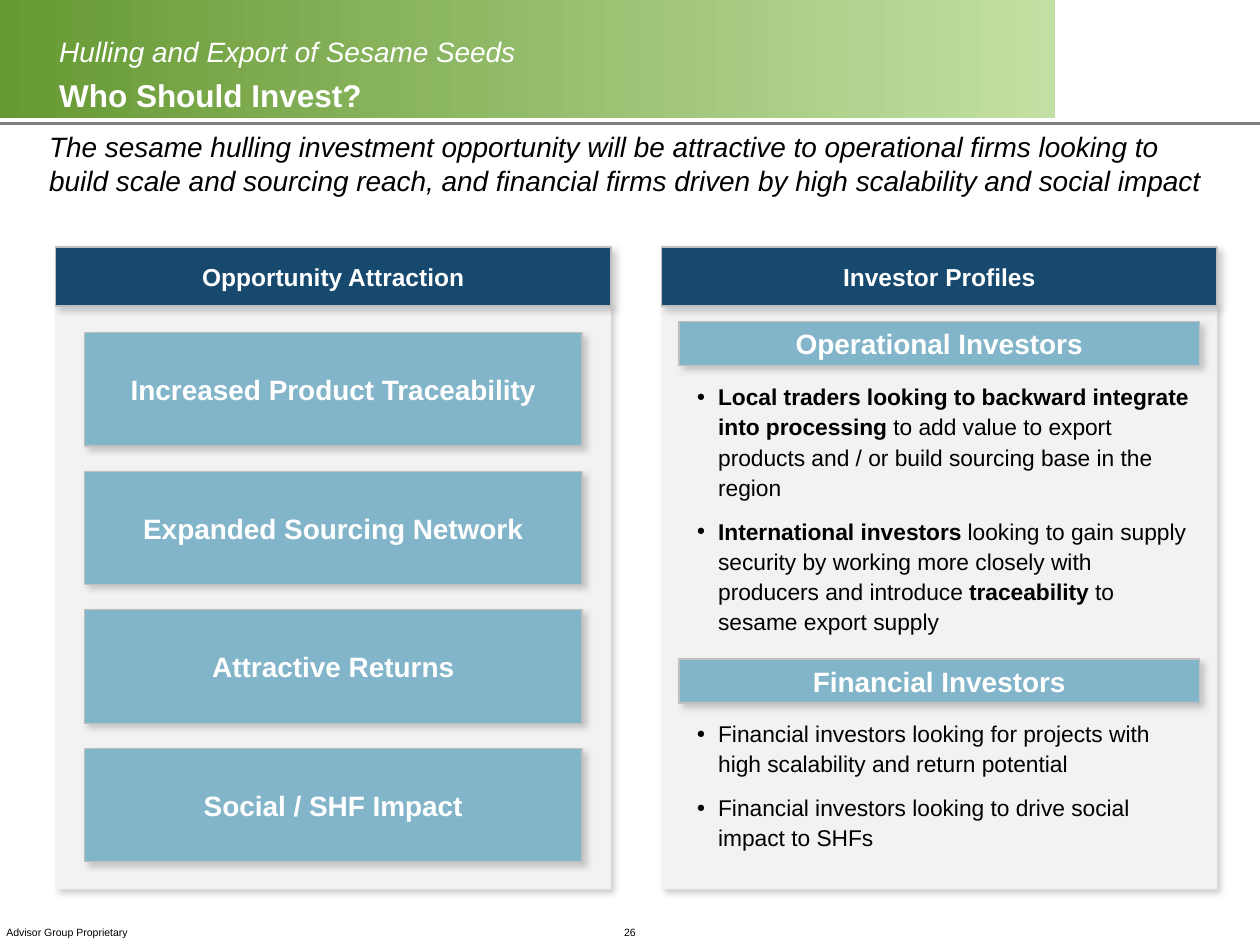
"""Build the slide on who should invest in sesame hulling and export."""
from dataclasses import dataclass

from pptx import Presentation
from pptx import util as u
from pptx.dml.color import RGBColor
from pptx.enum import shapes, text
from pptx.oxml import ns, xmlchemy

WHITE = RGBColor(0xFF, 0xFF, 0xFF)
BLACK = RGBColor(0x00, 0x00, 0x00)
GREEN = RGBColor(0x66, 0x99, 0x33)
PALE_GREEN = RGBColor(0xC2, 0xE0, 0xA3)
GREY = RGBColor(0x80, 0x80, 0x80)
EDGE = RGBColor(0xBF, 0xBF, 0xBF)
PANEL = RGBColor(0xF2, 0xF2, 0xF2)
NAVY = RGBColor(0x17, 0x49, 0x6F)
SKY = RGBColor(0x82, 0xB5, 0xCA)
FONT = "Arial"


@dataclass(frozen=True)
class Area:
    left: float
    top: float
    width: float
    height: float

    def lengths(self) -> tuple:
        return tuple(u.Inches(n) for n in (self.left, self.top, self.width, self.height))


@dataclass(frozen=True)
class Phrase:
    words: str
    bold: bool = False


@dataclass(frozen=True)
class Column:
    heading: str
    left: float


@dataclass(frozen=True)
class Profile:
    heading: str
    top: float
    bullets_top: float
    bullets_height: float
    bullets: tuple[tuple[Phrase, ...], ...]


COLUMNS = (Column("Opportunity Attraction", 0.44), Column("Investor Profiles", 5.25))
ATTRACTIONS = (
    "Increased Product Traceability",
    "Expanded Sourcing Network",
    "Attractive Returns",
    "Social / SHF Impact",
)
PROFILES = (
    Profile("Operational Investors", 2.55, 2.97, 2.14, (
        (Phrase("Local traders looking to backward integrate into processing ", True),
         Phrase("to add value to export products and / or build sourcing base in the region")),
        (Phrase("International investors ", True),
         Phrase("looking to gain supply security by working more closely with "
                "producers and introduce "),
         Phrase("traceability", True),
         Phrase(" to sesame export supply")),
    )),
    Profile("Financial Investors", 5.23, 5.64, 1.18, (
        (Phrase("Financial investors looking for projects with high scalability "
                "and return potential"),),
        (Phrase("Financial investors looking to drive social impact to SHFs"),),
    )),
)


def style(run, size: float, color: RGBColor, bold: bool = False, italic: bool = False) -> None:
    run.font.name = FONT
    run.font.size = u.Pt(size)
    run.font.color.rgb = color
    run.font.bold = bold
    run.font.italic = italic


def set_insets(frame, side: float = 0.05, end: float = 0.05) -> None:
    frame.margin_left = frame.margin_right = u.Inches(side)
    frame.margin_top = frame.margin_bottom = u.Inches(end)


def add_child(parent, tag: str, **attributes: str):
    child = xmlchemy.OxmlElement(tag)
    for name, value in attributes.items():
        child.set(name, value)
    parent.append(child)
    return child


def add_rectangle(slide, area: Area):
    rectangle = slide.shapes.add_shape(shapes.MSO_SHAPE.RECTANGLE, *area.lengths())
    rectangle.shadow.inherit = False
    rectangle.line.fill.background()
    return rectangle


def add_raised(slide, area: Area, fill: RGBColor):
    raised = add_rectangle(slide, area)
    raised.fill.solid()
    raised.fill.fore_color.rgb = fill
    effects = raised._element.spPr.find(ns.qn("a:effectLst"))
    shadow = add_child(effects, "a:outerShdw", blurRad=str(u.Pt(4)), dist=str(u.Pt(3)),
                       dir="2700000", algn="tl", rotWithShape="0")
    tint = add_child(shadow, "a:srgbClr", val=str(GREY))
    add_child(tint, "a:alpha", val="40000")
    return raised


def add_label(slide, area: Area, words: str, fill: RGBColor, size: float, inset: float) -> None:
    label = add_raised(slide, area, fill)
    label.line.color.rgb = EDGE
    label.line.width = u.Pt(0.75)
    frame = label.text_frame
    frame.text = words
    frame.word_wrap = True
    frame.vertical_anchor = text.MSO_ANCHOR.MIDDLE
    set_insets(frame, inset)
    frame.paragraphs[0].alignment = text.PP_ALIGN.CENTER
    style(frame.paragraphs[0].runs[0], size, WHITE, bold=True)


def add_text(slide, area: Area, words: str = "", wrap: bool = True):
    frame = slide.shapes.add_textbox(*area.lengths()).text_frame
    frame.text = words
    frame.word_wrap = wrap
    set_insets(frame)
    return frame


def add_banner(slide) -> None:
    banner = add_rectangle(slide, Area(0, 0, 8.37, 0.94))
    banner.fill.gradient()
    banner.fill.gradient_angle = 0
    for stop, color in zip(banner.fill.gradient_stops, (GREEN, PALE_GREEN)):
        stop.color.rgb = color
    rule = slide.shapes.add_connector(shapes.MSO_CONNECTOR.STRAIGHT, u.Inches(0),
                                      u.Inches(0.98), u.Inches(10), u.Inches(0.98))
    rule.line.color.rgb = GREY
    rule.line.width = u.Pt(2.25)
    add_child(rule._element.spPr, "a:effectLst")
    title = add_text(slide, Area(0.42, 0.04, 7.87, 0.86),
                     "Hulling and Export of Sesame Seeds\vWho Should Invest?")
    set_insets(title, end=0)
    title.vertical_anchor = text.MSO_ANCHOR.BOTTOM
    title.paragraphs[0].line_spacing = 1.2
    topic, question = title.paragraphs[0].runs
    style(topic, 16, WHITE, italic=True)
    style(question, 18, WHITE, bold=True)


def add_footer(slide, area: Area, words: str, alignment: text.PP_ALIGN) -> None:
    footer = add_text(slide, area, words, wrap=False)
    footer.vertical_anchor = text.MSO_ANCHOR.BOTTOM
    footer.paragraphs[0].alignment = alignment
    style(footer.paragraphs[0].runs[0], 6, BLACK)


def add_profile(slide, profile: Profile) -> None:
    add_label(slide, Area(5.39, profile.top, 4.13, 0.35), profile.heading, SKY, 16, 0.08)
    frame = add_text(slide, Area(5.4, profile.bullets_top, 4.13, profile.bullets_height))
    for index, phrases in enumerate(profile.bullets):
        bullet = frame.add_paragraph() if index else frame.paragraphs[0]
        bullet.line_spacing = 1.1
        bullet.space_before = u.Pt(4 if index else 0)
        bullet.space_after = u.Pt(4)
        properties = bullet._p.get_or_add_pPr()
        properties.set("marL", str(u.Inches(0.25)))
        properties.set("indent", str(u.Inches(-0.17)))
        add_child(properties, "a:buSzPct", val="65000")
        add_child(properties, "a:buFont", typeface=FONT)
        add_child(properties, "a:buChar", char="●")
        for phrase in phrases:
            run = bullet.add_run()
            run.text = phrase.words
            style(run, 13, BLACK, bold=phrase.bold)


def main() -> None:
    deck = Presentation()
    deck.slide_width, deck.slide_height = u.Inches(10), u.Inches(7.5)
    slide = deck.slides.add_slide(deck.slide_layouts[6])
    add_banner(slide)
    add_footer(slide, Area(4.9, 7.3, 0.2, 0.2), "26", text.PP_ALIGN.CENTER)
    add_footer(slide, Area(0, 7.3, 1.09, 0.2), "Advisor Group Proprietary", text.PP_ALIGN.LEFT)
    summary = add_text(slide, Area(0.34, 0.98, 9.31, 0.64),
                       "The sesame hulling investment opportunity will be attractive to "
                       "operational firms looking to build scale and sourcing reach, and "
                       "financial firms driven by high scalability and social impact")
    style(summary.paragraphs[0].runs[0], 16, BLACK, italic=True)
    for column in COLUMNS:
        add_raised(slide, Area(column.left, 2.42, 4.41, 4.64), PANEL)
        add_label(slide, Area(column.left, 1.96, 4.41, 0.47), column.heading, NAVY, 14, 0.05)
    for row, attraction in enumerate(ATTRACTIONS):
        add_label(slide, Area(0.67, 2.64 + 1.1 * row, 3.95, 0.9), attraction, SKY, 16, 0.08)
    for profile in PROFILES:
        add_profile(slide, profile)
    deck.save("out.pptx")


if __name__ == "__main__":
    main()
